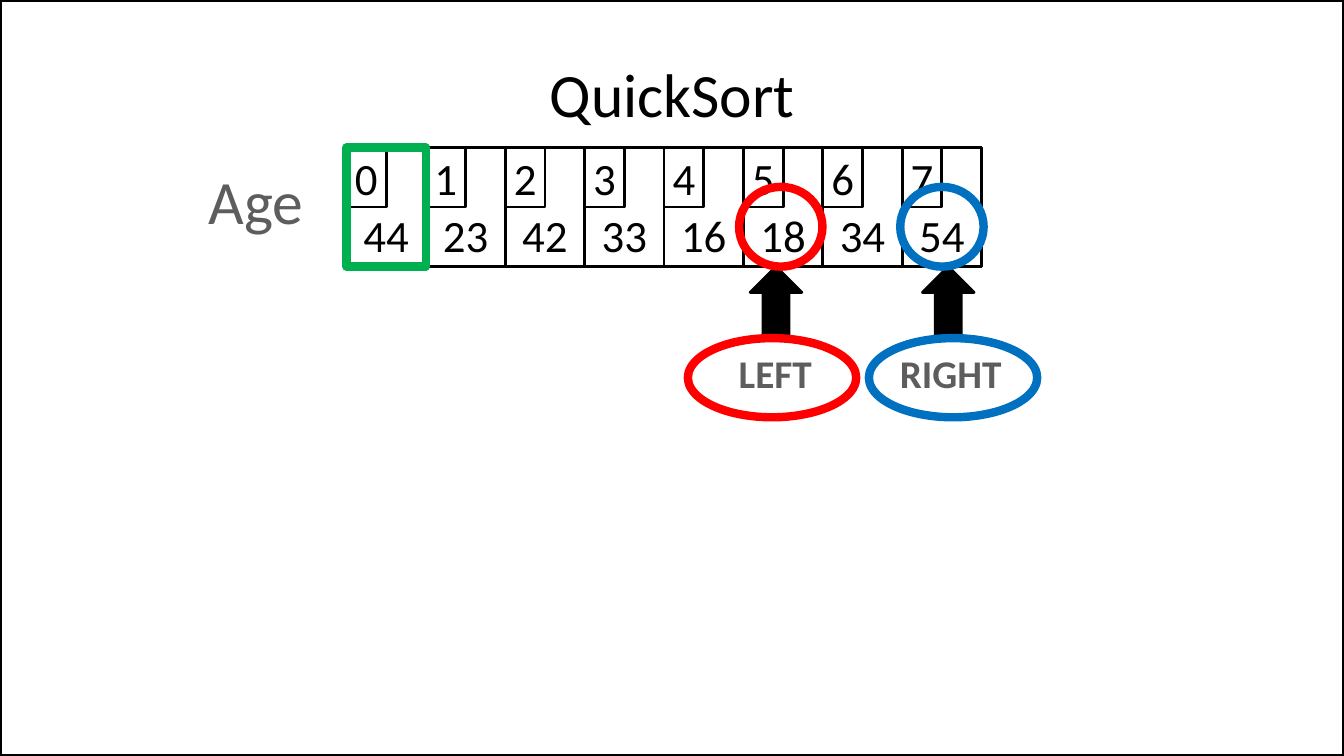
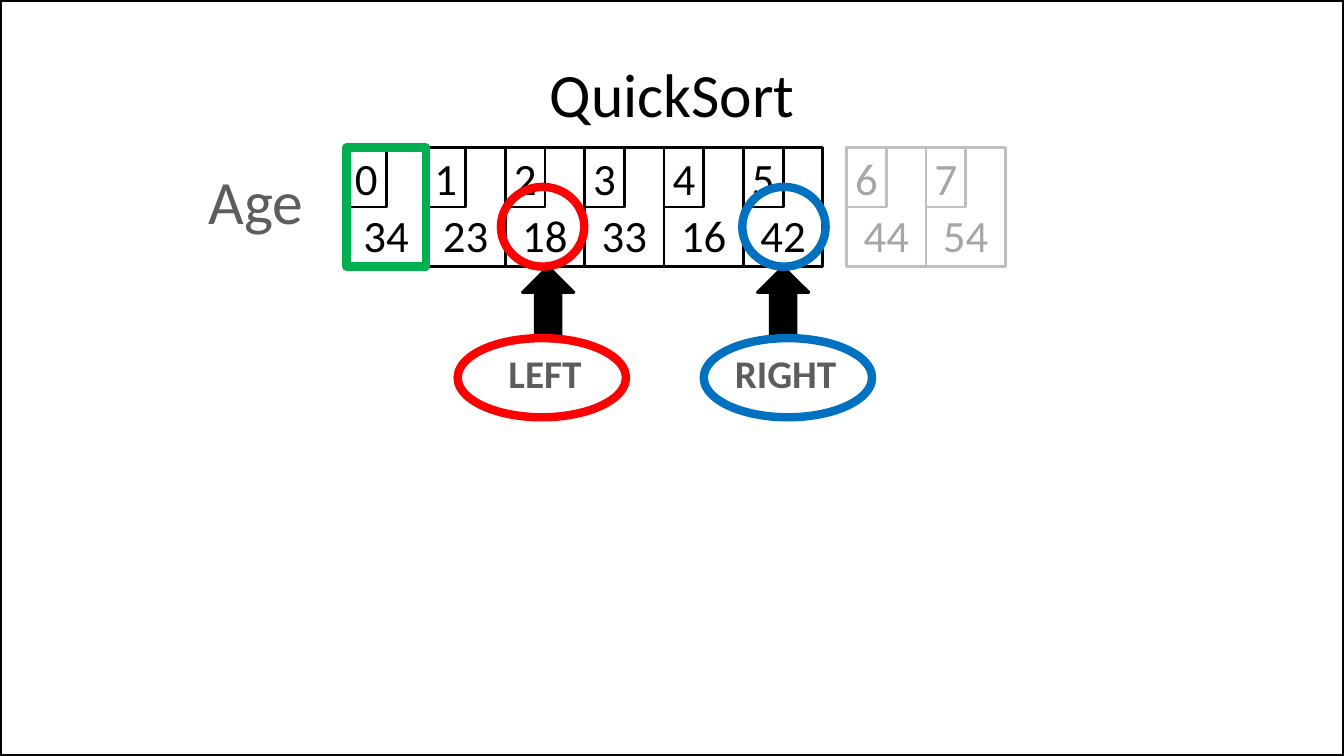
"""Build two QuickSort slides showing the partition pointers on an array."""
from typing import NamedTuple, Optional

from pptx import Presentation
from pptx.dml.color import RGBColor
from pptx.enum.shapes import MSO_SHAPE
from pptx.enum.text import MSO_ANCHOR, PP_ALIGN
from pptx.util import Cm, Inches, Pt

COLORS = {
    "ink": "000000",
    "label": "5D5D5D",
    "faded_line": "BFBFBF",
    "faded_text": "A6A6A6",
    "pivot": "00B050",
    "left": "FF0000",
    "right": "0070C0",
}
FONT = "Calibri"
COLUMN, ROW = Cm(2), Cm(1.5)
ARRAY_LEFT, ARRAY_TOP = Cm(8.73), Cm(3.72)
THIN, THICK = 2, 6
LABEL_WIDTHS = {"LEFT": 1.18, "RIGHT": 1.6}


class Area(NamedTuple):
    left: float
    top: float
    width: float
    height: float


class Style(NamedTuple):
    size: int
    color: str
    bold: bool = False


class Cell(NamedTuple):
    column: float
    index: int
    value: int
    line: str = "ink"
    text: str = "ink"


class Marker(NamedTuple):
    name: str
    color: str
    circle: float
    arrow: float
    label: float
    oval: float


class Step(NamedTuple):
    values: list[int]
    markers: list[Marker]
    active: int = 8


STEPS = [
    Step([44, 23, 42, 33, 16, 18, 34, 54], [
        Marker("LEFT", "left", 5.47, 5.41, 5.40, 5.36),
        Marker("RIGHT", "right", 7.50, 7.58, 7.61, 7.64),
    ]),
    Step([34, 23, 18, 33, 16, 42, 44, 54], [
        Marker("LEFT", "left", 2.47, 2.54, 2.50, 2.46),
        Marker("RIGHT", "right", 5.51, 5.50, 5.53, 5.56),
    ], active=6),
]
DETACHED_GAP = 0.3


def rgb(name: str) -> RGBColor:
    return RGBColor.from_string(COLORS[name])


def on_grid(area: Area) -> tuple[int, int, int, int]:
    return (round(ARRAY_LEFT + area.left * COLUMN), round(ARRAY_TOP + area.top * ROW),
            round(area.width * COLUMN), round(area.height * ROW))


def centered(center: float, top: float, width: float, height: float) -> Area:
    return Area(center - width / 2, top, width, height)


def write(frame, text: str, style: Style, anchor=MSO_ANCHOR.MIDDLE) -> None:
    frame.vertical_anchor = anchor
    para = frame.paragraphs[0]
    para.alignment = PP_ALIGN.CENTER
    span = para.add_run()
    span.text = text
    span.font.name = FONT
    span.font.size = Pt(style.size)
    span.font.bold = style.bold
    span.font.color.rgb = rgb(style.color)


def outline(box, color: str, width: float, fill: Optional[str] = None) -> None:
    box.shadow.inherit = False
    box.line.color.rgb = rgb(color)
    box.line.width = Pt(width)
    if fill:
        box.fill.solid()
        box.fill.fore_color.rgb = rgb(fill)
    else:
        box.fill.background()


def add_outline(page, kind, area: Area, color: str, width: float, fill: Optional[str] = None):
    box = page.shapes.add_shape(kind, *on_grid(area))
    outline(box, color, width, fill)
    return box


def add_label(page, text: str, area: Area, style: Style) -> None:
    frame = page.shapes.add_textbox(*on_grid(area)).text_frame
    frame.word_wrap = False
    frame.margin_left = frame.margin_right = 0
    write(frame, text, style)


def add_cell_box(page, cell: Cell, area: Area, number: int, anchor) -> None:
    frame = add_outline(page, MSO_SHAPE.RECTANGLE, area, cell.line, THIN).text_frame
    frame.margin_left = frame.margin_right = 0
    frame.margin_top = frame.margin_bottom = Inches(0.05)
    write(frame, str(number), Style(32, cell.text), anchor)


def add_cell(page, cell: Cell) -> None:
    add_cell_box(page, cell, Area(cell.column, 0, 1, 2), cell.value, MSO_ANCHOR.BOTTOM)
    add_cell_box(page, cell, Area(cell.column, 0, 0.5, 1), cell.index, MSO_ANCHOR.MIDDLE)


def add_marker(page, marker: Marker) -> None:
    add_outline(page, MSO_SHAPE.UP_ARROW, centered(marker.arrow, 2, 0.65, 1.2),
                "ink", THIN, fill="ink")
    add_label(page, marker.name,
              centered(marker.label, 3.29, LABEL_WIDTHS[marker.name], 0.97),
              Style(28, "label", bold=True))
    add_outline(page, MSO_SHAPE.OVAL, centered(marker.oval, 3.2, 2.12, 1.33),
                marker.color, THICK)
    add_outline(page, MSO_SHAPE.OVAL, centered(marker.circle, 0.66, 1.05, 1.34),
                marker.color, THICK)


def add_title(page) -> None:
    title = page.shapes.title
    title.left, title.top, title.width, title.height = map(Inches, (0.67, 0.3, 12, 1.25))
    write(title.text_frame, "QuickSort", Style(44, "ink"))


def add_border(deck, layout, page) -> None:
    border = page.shapes.add_shape(MSO_SHAPE.RECTANGLE, 0, 0, deck.slide_width, deck.slide_height)
    outline(border, "ink", 3)
    layout.shapes._spTree.append(border._element)


def array_cell(step: Step, index: int) -> Cell:
    value = step.values[index]
    if index < step.active:
        return Cell(index, index, value)
    return Cell(index + DETACHED_GAP, index, value, "faded_line", "faded_text")


def draw_step(page, step: Step) -> None:
    add_title(page)
    for index in range(len(step.values)):
        add_cell(page, array_cell(step, index))
    add_label(page, "Age", centered(-1.14, 0.17, 1.48, 1.42), Style(44, "label"))
    add_outline(page, MSO_SHAPE.RECTANGLE, Area(0, 0, 1, 2), "pivot", THICK)
    for marker in step.markers:
        add_marker(page, marker)


def main() -> None:
    deck = Presentation()
    deck.slide_width, deck.slide_height = Inches(13.33), Inches(7.5)
    layout = deck.slide_layouts.get_by_name("Title Only")
    pages = [deck.slides.add_slide(layout) for _ in STEPS]
    add_border(deck, layout, pages[0])
    for page, step in zip(pages, STEPS):
        draw_step(page, step)
    deck.save("out.pptx")


if __name__ == "__main__":
    main()
